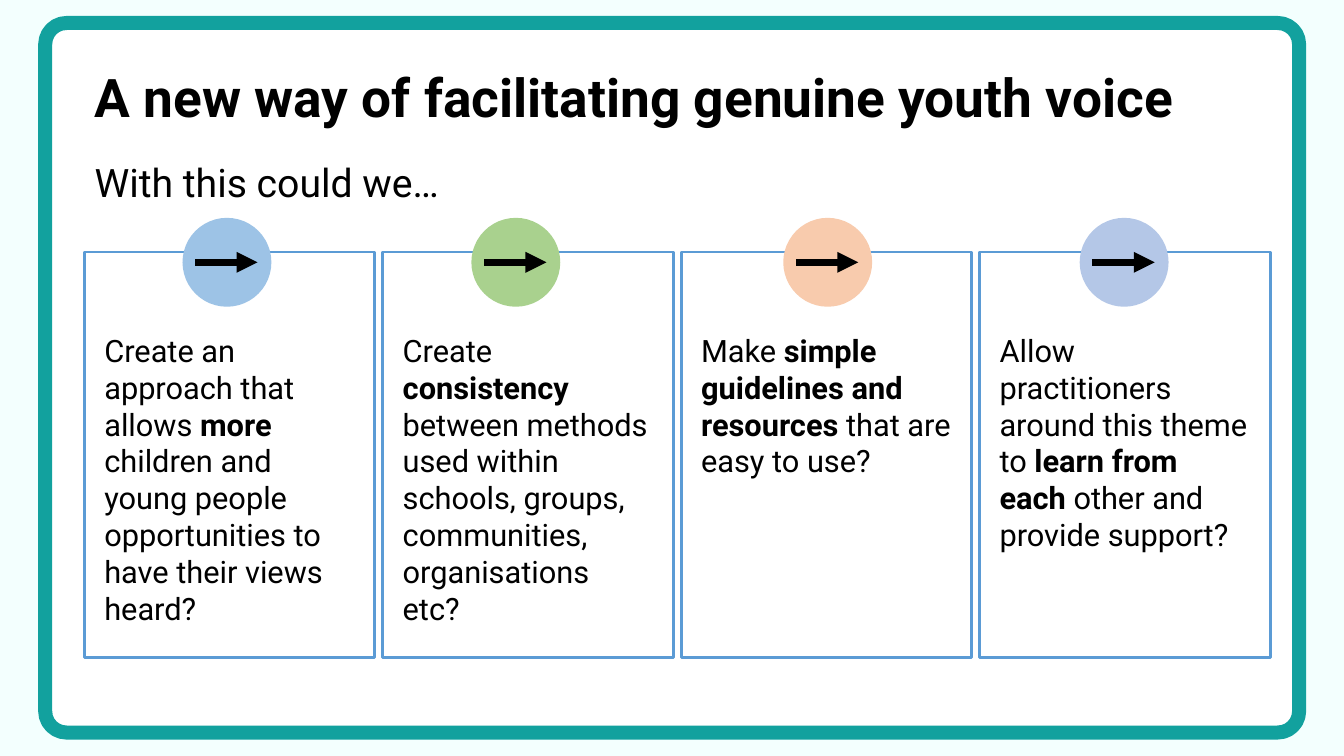
from dataclasses import dataclass

from lxml.etree import SubElement
from pptx import Presentation
from pptx.dml.color import RGBColor
from pptx.enum.shapes import MSO_CONNECTOR, MSO_SHAPE
from pptx.enum.text import MSO_ANCHOR, MSO_AUTO_SIZE, PP_ALIGN
from pptx.oxml.ns import qn
from pptx.util import Cm, Pt

FONT = "Roboto"
BLACK = "000000"
CARD_LEFT, CARD_TOP, CARD_WIDTH, CARD_HEIGHT = 2.13, 6.35, 7.32, 10.21
CARD_PITCH = 7.52
BADGE_TOP, BADGE_SIZE = 5.49, 2.24
ARROW_INSET, ARROW_LENGTH = 0.32, 1.57


@dataclass
class Card:
    before: str
    bold: str
    after: str
    badge_left: float
    badge_color: str


CARDS = [
    Card("Create an approach that allows ", "more",
         " children and young people opportunities to have their views heard?",
         4.6, "9DC3E6"),
    Card("Create ", "consistency",
         " between methods used within schools, groups, communities, "
         "organisations etc?", 11.88, "A9D18E"),
    Card("Make ", "simple guidelines and resources", " that are easy to use?",
         19.74, "F8CBAD"),
    Card("Allow practitioners around this theme to ", "learn from each ",
         "other and provide support?", 27.21, "B4C7E7"),
]


def rgb(color: str) -> RGBColor:
    return RGBColor.from_string(color)


def format_run(r, size: float, bold: bool = False) -> None:
    r.font.name = FONT
    r.font.size = Pt(size)
    r.font.bold = bold
    r.font.color.rgb = rgb(BLACK)


def fill_placeholder(sp, box: tuple, text: str, size: float, bold: bool,
                     anchor: MSO_ANCHOR) -> None:
    sp.left, sp.top, sp.width, sp.height = (Cm(v) for v in box)
    tf = sp.text_frame
    tf.text = text
    tf.word_wrap = True
    tf.auto_size = MSO_AUTO_SIZE.NONE
    tf.vertical_anchor = anchor
    p = tf.paragraphs[0]
    p.alignment = PP_ALIGN.LEFT
    p.line_spacing = 0.9
    format_run(p.runs[0], size, bold)


def draw_frame(slide) -> None:
    sp = slide.shapes.add_shape(MSO_SHAPE.ROUNDED_RECTANGLE, Cm(1.14), Cm(0.58),
                                Cm(31.6), Cm(17.88))
    sp.adjustments[0] = 0.03
    sp.shadow.inherit = False
    sp.fill.solid()
    sp.fill.fore_color.rgb = rgb("FFFFFF")
    sp.line.color.rgb = rgb("12A19E")
    sp.line.width = Pt(10)
    # Send behind the placeholders
    slide.shapes._spTree.insert(2, sp._element)


def draw_card(slide, card: Card, left: float) -> None:
    sp = slide.shapes.add_shape(MSO_SHAPE.RECTANGLE, Cm(left), Cm(CARD_TOP),
                                Cm(CARD_WIDTH), Cm(CARD_HEIGHT))
    sp.shadow.inherit = False
    sp.fill.background()
    sp.line.color.rgb = rgb("5B9BD5")
    sp.line.width = Pt(2)
    tf = sp.text_frame
    tf.word_wrap = True
    tf.vertical_anchor = MSO_ANCHOR.TOP
    tf.margin_left = tf.margin_right = tf.margin_bottom = Cm(0.5)
    tf.margin_top = Cm(2)
    p = tf.paragraphs[0]
    p.alignment = PP_ALIGN.LEFT
    for text in (card.before, card.bold, card.after):
        r = p.add_run()
        r.text = text
        format_run(r, 22, bold=text == card.bold)


def draw_badge(slide, card: Card) -> None:
    shapes = slide.shapes.add_group_shape().shapes
    sp = shapes.add_shape(MSO_SHAPE.OVAL, Cm(card.badge_left), Cm(BADGE_TOP),
                          Cm(BADGE_SIZE), Cm(BADGE_SIZE))
    sp.shadow.inherit = False
    sp.fill.solid()
    sp.fill.fore_color.rgb = rgb(card.badge_color)
    sp.line.fill.background()

    start = card.badge_left + ARROW_INSET
    middle = BADGE_TOP + BADGE_SIZE / 2
    arrow = shapes.add_connector(MSO_CONNECTOR.STRAIGHT, Cm(start), Cm(middle),
                                 Cm(start + ARROW_LENGTH), Cm(middle))
    arrow.line.color.rgb = rgb(BLACK)
    arrow.line.width = Pt(5)
    SubElement(arrow.line._get_or_add_ln(), qn("a:tailEnd"), type="triangle")
    SubElement(arrow._element.spPr, qn("a:effectLst"))


def main() -> None:
    prs = Presentation()
    prs.slide_width, prs.slide_height = Cm(33.87), Cm(19.05)
    slide = prs.slides.add_slide(prs.slide_layouts[1])
    slide.background.fill.solid()
    slide.background.fill.fore_color.rgb = rgb("F3FFFE")
    draw_frame(slide)

    # Title and lead-in
    fill_placeholder(slide.shapes.title, (2.13, 1.14, 31.14, 2.77),
                     "A new way of facilitating genuine youth voice",
                     38, True, MSO_ANCHOR.MIDDLE)
    body = slide.placeholders[1]
    fill_placeholder(body, (2.13, 3.99, 17.93, 2.31), "With this could we…",
                     28, False, MSO_ANCHOR.TOP)
    p = body.text_frame.paragraphs[0]
    p.space_before = Pt(10)
    pPr = p._p.get_or_add_pPr()
    pPr.set("marL", "0")
    pPr.set("indent", "0")
    SubElement(pPr, qn("a:buNone"))

    # Cards, then the arrow badges on top
    for i, card in enumerate(CARDS):
        draw_card(slide, card, CARD_LEFT + i * CARD_PITCH)
    for card in CARDS:
        draw_badge(slide, card)

    prs.save("out.pptx")


if __name__ == "__main__":
    main()
